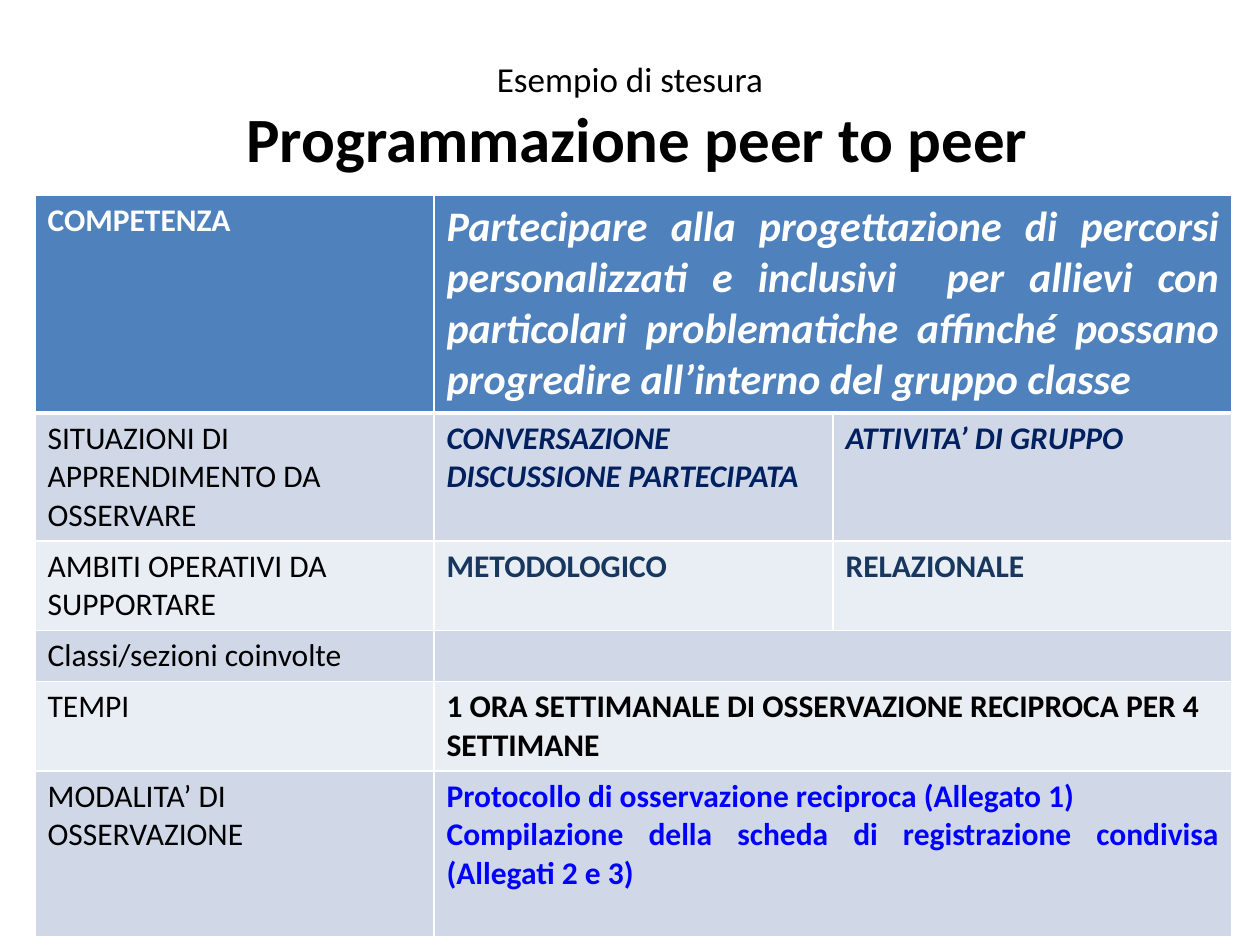
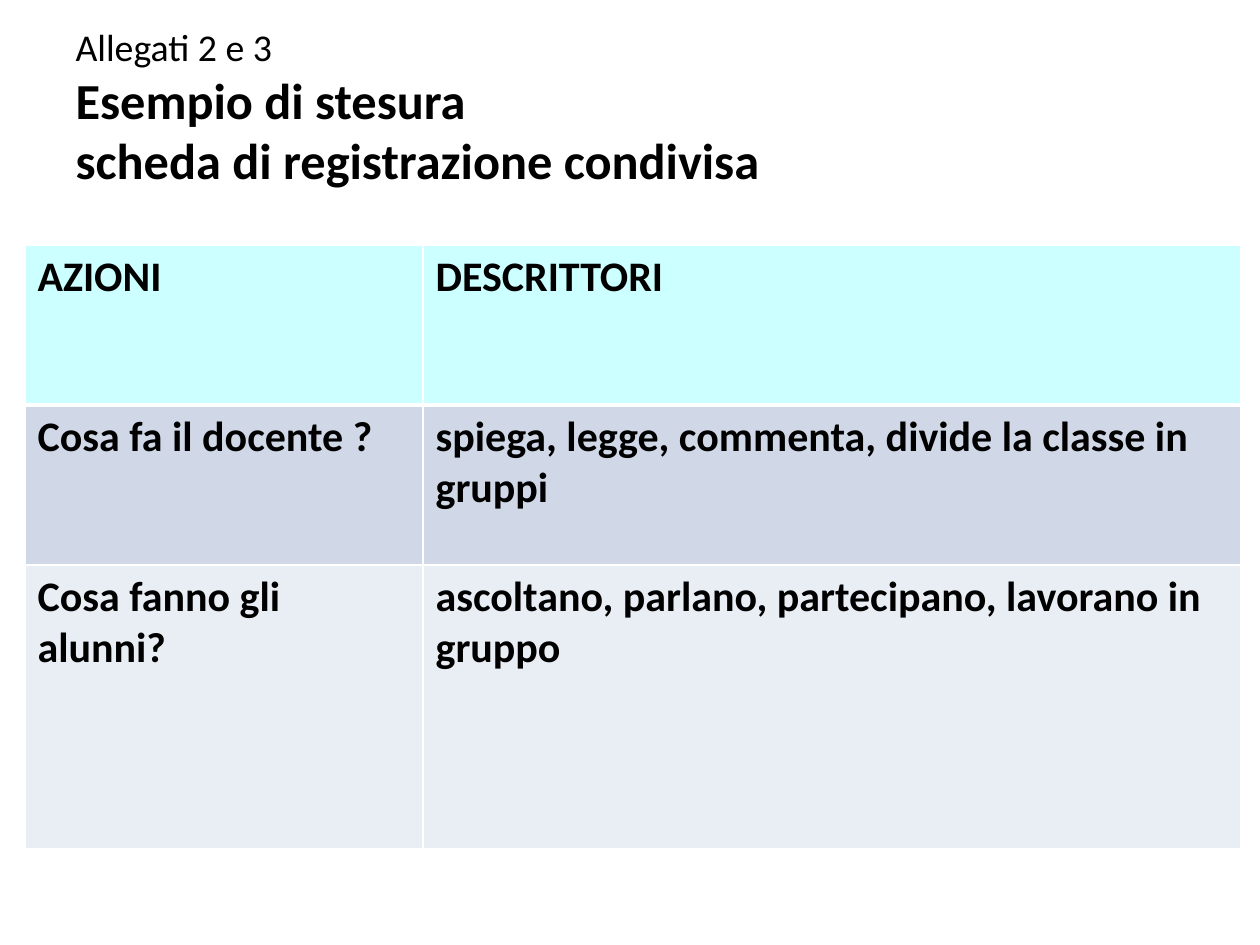
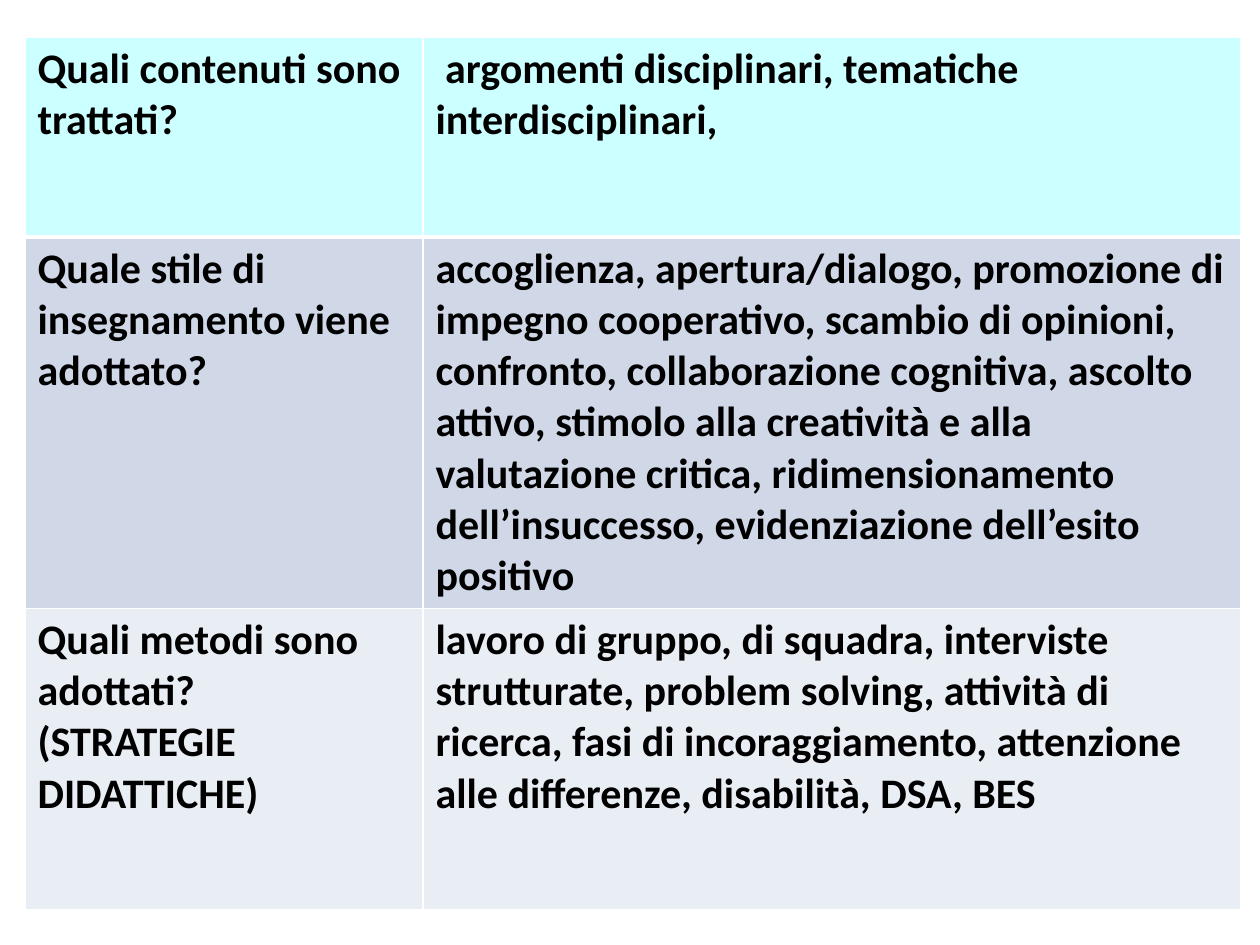
from dataclasses import dataclass

from lxml import etree
from pptx import Presentation
from pptx.dml.color import RGBColor
from pptx.enum.text import MSO_ANCHOR, MSO_AUTO_SIZE, PP_ALIGN
from pptx.oxml.ns import qn
from pptx.util import Pt

EMU_PER_PX = 914400 / 126
SLIDE_SIZE = (1260, 945)
TITLE_ONLY, BLANK = 5, 6
FONT = "Calibri"
COLORS = {
    "text": "000000",
    "white": "FFFFFF",
    "blue_header": "4F81BD",
    "cyan_header": "CCFFFF",
    "band_dark": "D0D8E8",
    "band_light": "E9EDF4",
    "navy": "002060",
    "slate": "17375E",
    "bright_blue": "0000FF",
}
BANDS = ("band_dark", "band_light")


@dataclass
class Entry:
    lines: tuple = ()
    color: str = "text"
    size: float = 18
    bold: bool = False
    italic: bool = False
    align: PP_ALIGN = PP_ALIGN.LEFT
    span: int = 1


def px(length):
    return round(length * EMU_PER_PX)


def add_run(paragraph, text, size, color="text", bold=False, italic=False):
    run = paragraph.add_run()
    run.text = text
    font = run.font
    font.name, font.size, font.bold, font.italic = FONT, Pt(size), bold, italic
    font.color.rgb = RGBColor.from_string(COLORS[color])


def fill_title(slide, box, lines, align):
    title = slide.shapes.title
    title.left, title.top, title.width, title.height = map(px, box)
    frame = title.text_frame
    frame.word_wrap = True
    frame.auto_size = MSO_AUTO_SIZE.NONE
    frame.vertical_anchor = MSO_ANCHOR.MIDDLE
    paragraph = frame.paragraphs[0]
    paragraph.alignment = align
    for index, (text, size, bold) in enumerate(lines):
        if index:
            paragraph.add_line_break()
        add_run(paragraph, text, size, bold=bold)


def set_borders(cell, row):
    widths = {"lnL": 1, "lnR": 1, "lnT": 3 if row == 1 else 1, "lnB": 3 if row == 0 else 1}
    properties = cell._tc.get_or_add_tcPr()
    for position, (side, width) in enumerate(widths.items()):
        line = etree.Element(qn(f"a:{side}"), w=str(Pt(width)))
        fill = etree.SubElement(line, qn("a:solidFill"))
        etree.SubElement(fill, qn("a:srgbClr"), val=COLORS["white"])
        properties.insert(position, line)


def fill_cell(cell, entry):
    for index, line in enumerate(entry.lines):
        frame = cell.text_frame
        paragraph = frame.add_paragraph() if index else frame.paragraphs[0]
        paragraph.alignment = entry.align
        add_run(paragraph, line, entry.size, entry.color, entry.bold, entry.italic)


def add_banded_table(slide, origin, widths, heights, header_color, rows):
    box = (*origin, sum(widths), sum(heights))
    table = slide.shapes.add_table(len(heights), len(widths), *map(px, box)).table
    for column, width in zip(table.columns, widths):
        column.width = px(width)
    for row_index, (height, entries) in enumerate(zip(heights, rows)):
        table.rows[row_index].height = px(height)
        color = BANDS[(row_index - 1) % 2] if row_index else header_color
        for column_index in range(len(widths)):
            cell = table.cell(row_index, column_index)
            cell.fill.solid()
            cell.fill.fore_color.rgb = RGBColor.from_string(COLORS[color])
            set_borders(cell, row_index)
        column_index = 0
        for entry in entries:
            cell = table.cell(row_index, column_index)
            if entry.span > 1:
                cell.merge(table.cell(row_index, column_index + entry.span - 1))
            fill_cell(cell, entry)
            column_index += entry.span


def add_register_table(slide, top, heights, rows):
    entries = [[Entry(lines, size=24, bold=True) for lines in row] for row in rows]
    add_banded_table(slide, (25, top), (398, 818), heights, "cyan_header", entries)


def add_slide(presentation, layout):
    return presentation.slides.add_slide(presentation.slide_layouts[layout])


def build_planning(presentation):
    slide = add_slide(presentation, TITLE_ONLY)
    fill_title(slide, (63, 38, 1134, 157), [
        ("Esempio di stesura", 20, False),
        (" Programmazione peer to peer", 36, True),
    ], PP_ALIGN.CENTER)
    rows = [
        [Entry(("COMPETENZA",), "white", bold=True),
         Entry(("Partecipare alla progettazione di percorsi personalizzati e inclusivi  per "
                "allievi con particolari problematiche affinché possano progredire "
                "all’interno del gruppo classe",),
               "white", 24, True, True, PP_ALIGN.JUSTIFY, 2)],
        [Entry(("SITUAZIONI DI APPRENDIMENTO DA OSSERVARE",)),
         Entry(("CONVERSAZIONE", "DISCUSSIONE PARTECIPATA"), "navy", bold=True, italic=True),
         Entry(("ATTIVITA’ DI GRUPPO",), "navy", bold=True, italic=True)],
        [Entry(("AMBITI OPERATIVI DA SUPPORTARE",)),
         Entry(("METODOLOGICO",), "slate", bold=True),
         Entry(("RELAZIONALE",), "slate", bold=True)],
        [Entry(("Classi/sezioni coinvolte",)), Entry(span=2)],
        [Entry(("TEMPI",)),
         Entry(("1 ORA SETTIMANALE DI OSSERVAZIONE RECIPROCA PER 4 SETTIMANE",),
               bold=True, span=2)],
        [Entry(("MODALITA’ DI OSSERVAZIONE",)),
         Entry(("Protocollo di osservazione reciproca (Allegato 1)",
                "Compilazione della scheda di registrazione condivisa (Allegati 2 e 3)"),
               "bright_blue", bold=True, align=PP_ALIGN.JUSTIFY, span=2)],
    ]
    add_banded_table(slide, (35, 195), (399,) * 3, (218, 128, 89, 51, 89, 166),
                     "blue_header", rows)


def build_actions(presentation):
    slide = add_slide(presentation, TITLE_ONLY)
    fill_title(slide, (63, 37, 1134, 139), [
        ("Allegati 2 e 3", 21.6, False),
        ("Esempio di stesura ", 28.8, True),
        ("scheda di registrazione condivisa", 28.8, True),
    ], PP_ALIGN.LEFT)
    add_register_table(slide, 245, (160, 160, 284), [
        (("AZIONI",), ("DESCRITTORI",)),
        (("Cosa fa il docente ?",),
         ("spiega, legge, commenta, divide la classe in gruppi",)),
        (("Cosa fanno gli alunni?",),
         ("ascoltano, parlano, partecipano, lavorano in gruppo",)),
    ])


def build_teaching(presentation):
    slide = add_slide(presentation, BLANK)
    add_register_table(slide, 37, (200, 371, 301), [
        (("Quali contenuti sono trattati?",),
         (" argomenti disciplinari, tematiche interdisciplinari,",)),
        (("Quale stile di insegnamento viene adottato?",),
         ("accoglienza, apertura/dialogo, promozione di impegno cooperativo, scambio di "
          "opinioni, confronto, collaborazione cognitiva, ascolto attivo, stimolo alla "
          "creatività e alla valutazione critica, ridimensionamento dell’insuccesso, "
          "evidenziazione dell’esito positivo",)),
        (("Quali metodi sono adottati?", "(STRATEGIE DIDATTICHE)"),
         ("lavoro di gruppo, di squadra, interviste strutturate, problem solving, attività "
          "di ricerca, fasi di incoraggiamento, attenzione alle differenze, disabilità, "
          "DSA, BES",)),
    ])


def main():
    presentation = Presentation()
    presentation.slide_width, presentation.slide_height = map(px, SLIDE_SIZE)
    build_planning(presentation)
    build_actions(presentation)
    build_teaching(presentation)
    presentation.save("out.pptx")


if __name__ == "__main__":
    main()
